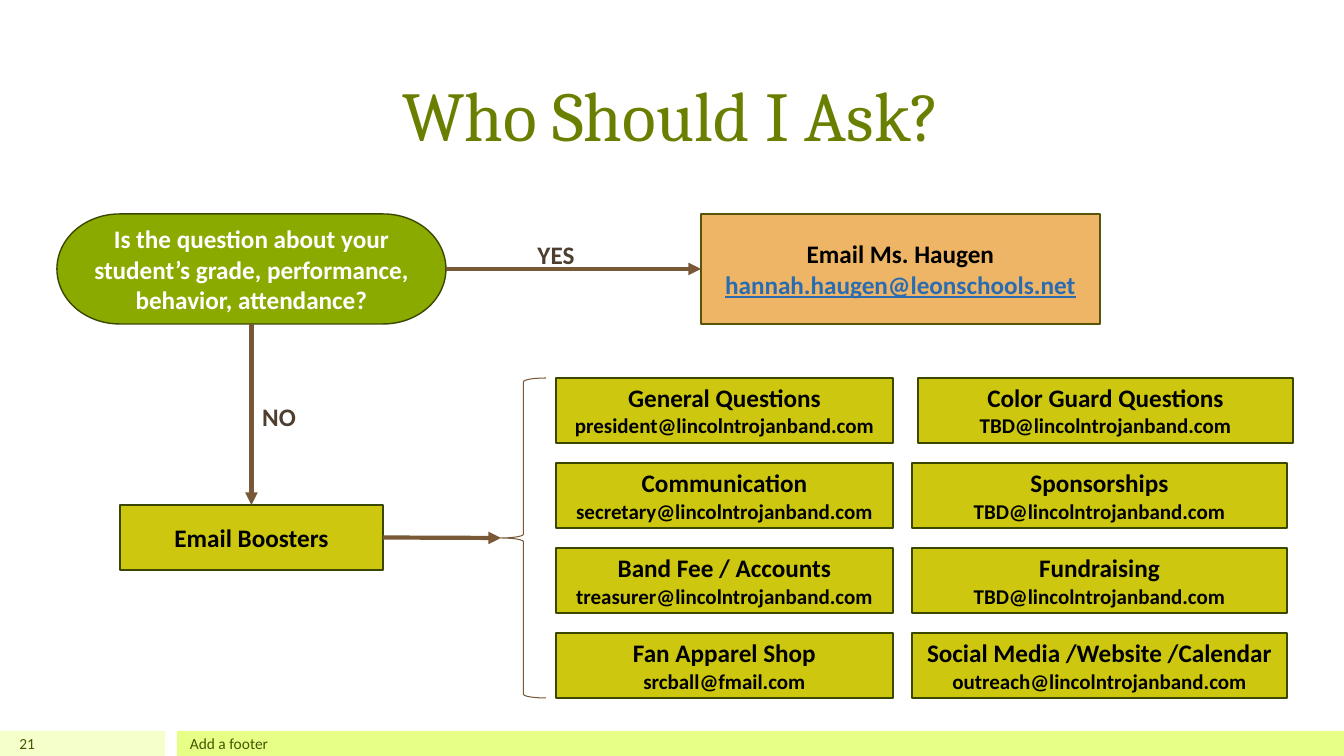
from dataclasses import dataclass

from pptx import Presentation
from pptx.dml.color import RGBColor
from pptx.enum.shapes import MSO_CONNECTOR as Link, MSO_SHAPE as Kind
from pptx.enum.text import MSO_ANCHOR as Anchor, PP_ALIGN as Align
from pptx.oxml.ns import qn
from pptx.util import Pt
from lxml.etree import SubElement

SCALE = 914400 / 100.8  # EMU in one px
TOP, LEFT, BOTTOM, RIGHT = range(4)  # connection sites


@dataclass(frozen=True)
class Theme:
    head: str = "Cambria"
    body: str = "Calibri"
    title: str = "687F00"
    foot: str = "455500"
    pale: str = "F4FFCB"
    lime: str = "E8FF87"
    green: str = "8BAA00"
    olive: str = "CDC80F"
    peach: str = "EFB566"
    edge: str = "3A4700"
    rim: str = "565406"
    brown: str = "795837"
    label: str = "4D3E2F"
    link: str = "2A6CB2"
    black: str = "000000"
    white: str = "FFFFFF"
    huge: int = 50
    large: int = 18
    mid: int = 15
    small: int = 11


T = Theme()

MAILS = [
    (556, 337, [
        ("General Questions", "president@lincolntrojanband.com"),
        ("Communication", "secretary@lincolntrojanband.com"),
        ("Band Fee / Accounts", "treasurer@lincolntrojanband.com"),
        ("Fan Apparel Shop", "srcball@fmail.com"),
    ]),
    (912, 375, [
        ("Color Guard Questions", "TBD@lincolntrojanband.com"),
        ("Sponsorships", "TBD@lincolntrojanband.com"),
        ("Fundraising", "TBD@lincolntrojanband.com"),
        ("Social Media /Website /Calendar", "outreach@lincolntrojanband.com"),
    ]),
]
ROW_TOP, ROW_STEP, ROW_HIGH = 378, 85, 65


def px(*nums):
    return [round(n * SCALE) for n in nums]


def rgb(code):
    return RGBColor.from_string(code)


def write(frame, text, size=T.large, color=T.black, font=T.body, bold=True,
          under=False, align=Align.CENTER, anchor=Anchor.MIDDLE, more=False):
    """Set the text of a frame, or add it as one more paragraph."""
    frame.word_wrap = True
    frame.vertical_anchor = anchor
    para = frame.add_paragraph() if more else frame.paragraphs[0]
    para.alignment = align
    run = para.add_run()
    run.text = text
    face = run.font
    face.name, face.size, face.bold = font, Pt(size), bold
    face.underline = under
    face.color.rgb = rgb(color)


def label(slide, area, text, **form):
    box = slide.shapes.add_textbox(*px(*area))
    write(box.text_frame, text, **form)


def shape(slide, area, fill=None, line=None, width=1, kind=Kind.RECTANGLE):
    item = slide.shapes.add_shape(kind, *px(*area))
    item.shadow.inherit = False
    if fill:
        item.fill.solid()
        item.fill.fore_color.rgb = rgb(fill)
    else:
        item.fill.background()
    if line:
        item.line.color.rgb = rgb(line)
        item.line.width = Pt(width)
    else:
        item.line.fill.background()
    return item


def arrow(slide, start, out, end, into):
    """Join a site of one shape to a site of another."""
    item = slide.shapes.add_connector(Link.STRAIGHT, 0, 0, 0, 0)
    item.begin_connect(start, out)
    item.end_connect(end, into)
    item.line.color.rgb = rgb(T.brown)
    item.line.width = Pt(3)
    SubElement(item.line._get_or_add_ln(), qn("a:tailEnd"), type="triangle")
    SubElement(item._element.spPr, qn("a:effectLst"))


def footer(slide):
    shape(slide, (0, 731, 165, 25), T.pale)
    shape(slide, (177, 731, 1167, 25), T.lime)
    form = dict(size=T.small, color=T.foot, bold=False)
    label(slide, (0, 731, 45, 25), "21", align=Align.RIGHT, **form)
    label(slide, (180, 731, 1008, 25), "Add a footer", align=Align.LEFT, **form)


def mails(slide):
    for left, wide, rows in MAILS:
        for i, (topic, mail) in enumerate(rows):
            shift = 6 if topic == "Color Guard Questions" else 0
            area = (left + shift, ROW_TOP + i * ROW_STEP, wide, ROW_HIGH)
            frame = shape(slide, area, T.olive, T.edge).text_frame
            write(frame, topic)
            write(frame, mail, size=T.mid, more=True)


def flow(slide):
    ask = shape(slide, (57, 214, 389, 110), T.green, T.edge,
                kind=Kind.FLOWCHART_TERMINATOR)
    write(ask.text_frame, "Is the question about your student’s grade, "
          "performance, behavior, attendance?", color=T.white)

    staff = shape(slide, (701, 214, 399, 110), T.peach, T.rim)
    write(staff.text_frame, "Email Ms. Haugen")
    write(staff.text_frame, "hannah.haugen@leonschools.net", color=T.link,
          under=True, more=True)

    boost = shape(slide, (120, 505, 263, 65), T.olive, T.edge)
    write(boost.text_frame, "Email Boosters")

    brace = shape(slide, (501, ROW_TOP, 45, 3 * ROW_STEP + ROW_HIGH),
                  line=T.brown, width=0.75, kind=Kind.LEFT_BRACE)

    arrow(slide, ask, RIGHT, staff, LEFT)
    arrow(slide, ask, BOTTOM, boost, TOP)
    arrow(slide, boost, RIGHT, brace, LEFT)
    for left, top, word in [(502, 234, "YES"), (225, 396, "NO")]:
        label(slide, (left, top, 108, 40), word, color=T.label,
              anchor=Anchor.TOP)


def main():
    deck = Presentation()
    deck.slide_width, deck.slide_height = px(1344, 756)
    slide = deck.slides.add_slide(deck.slide_layouts[6])
    footer(slide)
    label(slide, (155, 30, 1033, 130), "Who Should I Ask?", size=T.huge,
          color=T.title, font=T.head, bold=False, anchor=Anchor.BOTTOM)
    mails(slide)
    flow(slide)
    deck.save("out.pptx")


if __name__ == "__main__":
    main()
